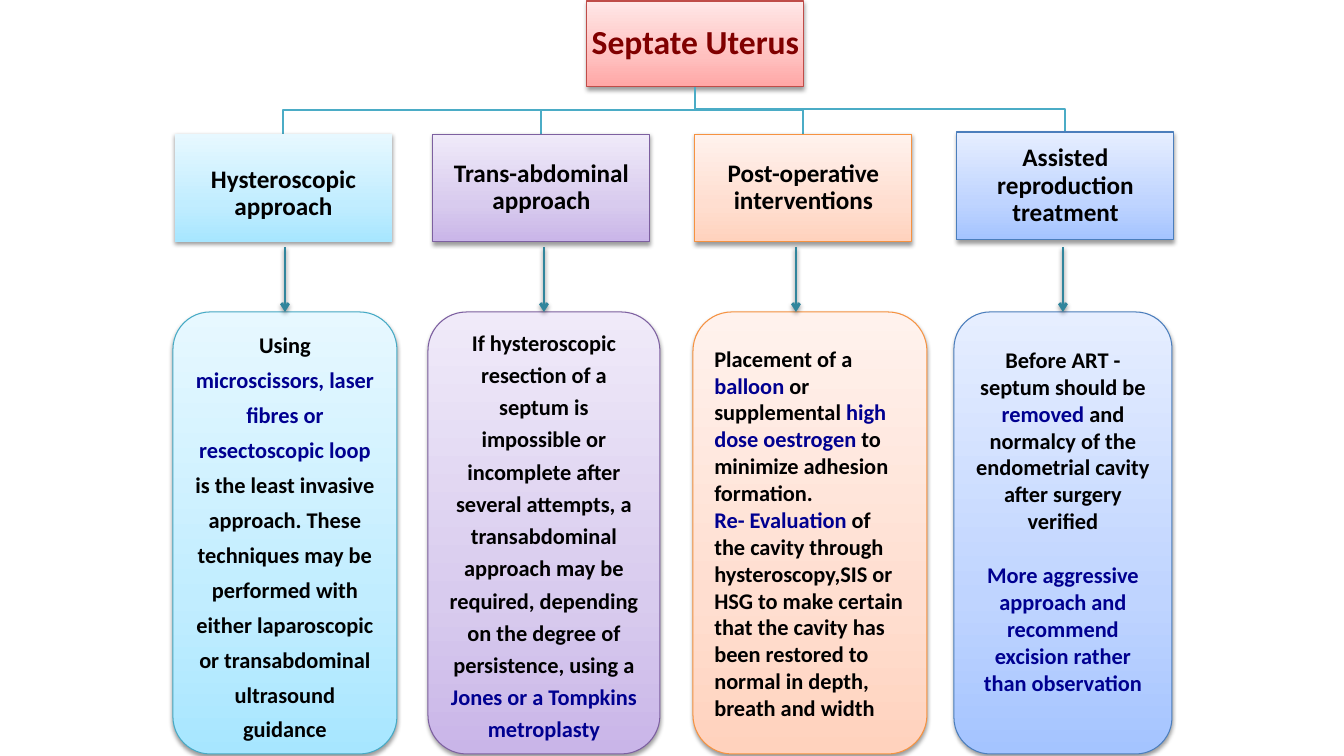
"""Build the Septate Uterus treatment tree slide."""
from copy import deepcopy

from lxml.etree import SubElement
from pptx import Presentation
from pptx.dml.color import RGBColor
from pptx.enum.shapes import MSO_CONNECTOR, MSO_SHAPE
from pptx.enum.text import MSO_ANCHOR, MSO_AUTO_SIZE, PP_ALIGN
from pptx.oxml.ns import qn
from pptx.util import Emu, Pt

PX = 12192000 / 1344
BLACK, NAVY = "000000", "000090"
rgb = RGBColor.from_string


def cast_shadow(item):
    """Give an item a soft shadow below it."""
    item.shadow.inherit = False
    effects = item._element.spPr.find(qn("a:effectLst"))
    shadow = SubElement(effects, qn("a:outerShdw"), blurRad="40000", dist="20000",
                        dir="5400000", rotWithShape="0")
    black = SubElement(shadow, qn("a:srgbClr"), val=BLACK)
    SubElement(black, qn("a:alpha"), val="38000")


def paint(box, tones, outline):
    """Fill a box with a three-tone upward gradient, outline it and shade it."""
    box.fill.gradient()
    box.fill.gradient_angle = 90
    stop_list = box._element.spPr.find(".//" + qn("a:gsLst"))
    stop_list.insert(1, deepcopy(stop_list[0]))
    for stop, tone, position in zip(box.fill.gradient_stops, tones, (0, 0.35, 1)):
        stop.color.rgb = rgb(tone)
        stop.position = position
    if outline:
        box.line.color.rgb = rgb(outline)
        box.line.width = Pt(0.75)
    else:
        box.line.fill.background()
    cast_shadow(box)


BLUE_TONES = ("A7E6FF", "C1EDFF", "E7F8FF")
PURPLE_TONES = ("C9B5E8", "D8CBEE", "F0EAF9")
ORANGE_TONES = ("FFD2BD", "FFDED0", "FFF2ED")
INDIGO_TONES = ("A4C4FF", "BFD4FF", "E6EEFF")

branches = [
    dict(heading="Hysteroscopic approach", tones=BLUE_TONES, node_line=None,
         detail_line="46AAC5", node=(175, 134), node_inset=13, detail=(173, 224),
         arrow=285, align=PP_ALIGN.CENTER, spacing=1.3, bottom_inset=5,
         paragraphs=[[("Using ", BLACK),
                      ("microscissors, laser fibres or resectoscopic loop ", NAVY),
                      ("is the least invasive approach. These techniques may be "
                       "performed with either laparoscopic or transabdominal "
                       "ultrasound guidance", BLACK)]]),
    dict(heading="Trans-abdominal approach", tones=PURPLE_TONES, node_line="7D60A0",
         detail_line="7D60A0", node=(433, 134), node_inset=1, detail=(428, 232),
         arrow=544, align=PP_ALIGN.CENTER, spacing=1.2, bottom_inset=5,
         paragraphs=[[("If hysteroscopic resection of a septum is impossible or "
                       "incomplete after several attempts, a transabdominal approach "
                       "may be required, depending on the degree of persistence, "
                       "using a ", BLACK),
                      ("Jones or a Tompkins metroplasty", NAVY)]]),
    dict(heading="Post-operative interventions", tones=ORANGE_TONES, node_line="F69240",
         detail_line="F69240", node=(695, 134), node_inset=1, detail=(693, 234),
         arrow=796, align=PP_ALIGN.LEFT, spacing=1.0, bottom_inset=5,
         paragraphs=[[("Placement of a ", BLACK), ("balloon ", NAVY),
                      ("or supplemental ", BLACK), ("high dose oestrogen", NAVY),
                      (" to minimize adhesion formation.", BLACK)],
                     [("Re- Evaluation ", NAVY),
                      ("of the cavity through hysteroscopy,SIS or HSG to make certain "
                       "that the cavity has been restored to normal in depth, breath "
                       "and width", BLACK)]]),
    dict(heading="Assisted reproduction treatment", tones=INDIGO_TONES,
         node_line="4B7EBC", detail_line="4B7EBC", node=(957, 132), node_inset=1,
         detail=(954, 218), arrow=1063, align=PP_ALIGN.CENTER, spacing=1.0,
         bottom_inset=29,
         paragraphs=[[("Before ART - septum should be ", BLACK), ("removed ", NAVY),
                      ("and normalcy of the endometrial cavity after surgery verified",
                       BLACK)],
                     [("More aggressive approach and recommend excision rather than "
                       "observation", NAVY)]]),
]

NODE_WIDTH, NODE_HEIGHT = 217, 108
ROOT_LEFT, ROOT_TOP, ROOT_HEIGHT = 587, 1, 86
STEM_X, STEM_TOP = ROOT_LEFT + NODE_WIDTH // 2, ROOT_TOP + ROOT_HEIGHT
DETAIL_TOP, DETAIL_HEIGHT = 312, 442
ARROW_TOP = 247

deck = Presentation()
deck.slide_width, deck.slide_height = Emu(12192000), Emu(6858000)
slide = deck.slides.add_slide(deck.slide_layouts[5])
shapes = slide.shapes

root = shapes.title
root.left, root.top, root.width, root.height = (
    Emu(round(n * PX)) for n in (ROOT_LEFT, ROOT_TOP, NODE_WIDTH, ROOT_HEIGHT))
paint(root, ("FFA6A5", "FFC0BF", "FFE7E7"), "BF4C48")
root_text = root.text_frame
root_text.text = "Septate Uterus"
root_text.auto_size = MSO_AUTO_SIZE.NONE
root_text.word_wrap = True
root_text.vertical_anchor = MSO_ANCHOR.MIDDLE
root_text.margin_left = root_text.margin_right = Emu(round(2 * PX))
root_text.margin_top = root_text.margin_bottom = Emu(round(2 * PX))
title_line = root_text.paragraphs[0]
title_line.alignment = PP_ALIGN.CENTER
title_line.line_spacing = 0.9
title_line.font.name, title_line.font.size = "Calibri", Pt(24)
title_line.font.bold = True
title_line.font.color.rgb = rgb("800000")

for branch in reversed(branches):
    node_left, node_top = branch["node"]
    node_x, bar_y = node_left + NODE_WIDTH // 2, (STEM_TOP + node_top) // 2
    outline = shapes.build_freeform(STEM_X, STEM_TOP, scale=PX)
    outline.add_line_segments([(STEM_X, bar_y), (node_x, bar_y), (node_x, node_top)],
                              close=False)
    limb = outline.convert_to_shape()
    limb.fill.background()
    limb.line.color.rgb = rgb("4BACC6")
    limb.line.width = Pt(2)
    limb.shadow.inherit = False

for branch in branches:
    node = shapes.add_shape(MSO_SHAPE.RECTANGLE, *(
        Emu(round(n * PX)) for n in (*branch["node"], NODE_WIDTH, NODE_HEIGHT)))
    paint(node, branch["tones"], branch["node_line"])
    node_text = node.text_frame
    node_text.text = branch["heading"]
    node_text.word_wrap = True
    node_text.vertical_anchor = MSO_ANCHOR.MIDDLE
    node_text.margin_left = node_text.margin_right = Emu(round(PX))
    node_text.margin_top = Emu(round(branch["node_inset"] * PX))
    node_text.margin_bottom = Emu(round(PX))
    heading = node_text.paragraphs[0]
    heading.alignment = PP_ALIGN.CENTER
    heading.line_spacing = 0.9
    heading.font.name, heading.font.size, heading.font.bold = "Calibri", Pt(18), True
    heading.font.color.rgb = rgb(BLACK)

    detail_left, detail_width = branch["detail"]
    detail = shapes.add_shape(MSO_SHAPE.ROUNDED_RECTANGLE, *(
        Emu(round(n * PX))
        for n in (detail_left, DETAIL_TOP, detail_width, DETAIL_HEIGHT)))
    paint(detail, branch["tones"], branch["detail_line"])
    detail_text = detail.text_frame
    detail_text.word_wrap = True
    detail_text.vertical_anchor = MSO_ANCHOR.MIDDLE
    detail_text.margin_bottom = Emu(round(branch["bottom_inset"] * PX))
    for index, pieces in enumerate(branch["paragraphs"]):
        paragraph = detail_text.add_paragraph() if index else detail_text.paragraphs[0]
        paragraph.alignment = branch["align"]
        paragraph.line_spacing = branch["spacing"]
        if index and branch["align"] == PP_ALIGN.CENTER:
            paragraph.space_before = Pt(19.5)
        paragraph.font.name, paragraph.font.size = "Calibri", Pt(16)
        paragraph.font.bold = True
        for words, colour in pieces:
            run = paragraph.add_run()
            run.text = words
            run.font.color.rgb = rgb(colour)

    arrow_x = Emu(round(branch["arrow"] * PX))
    arrow = shapes.add_connector(MSO_CONNECTOR.STRAIGHT, arrow_x,
                                 Emu(round(ARROW_TOP * PX)), arrow_x,
                                 Emu(round(DETAIL_TOP * PX)))
    if branch["arrow"] == detail_left + detail_width // 2:
        arrow.end_connect(detail, 0)
    arrow.line.color.rgb = rgb("31859C")
    arrow.line.width = Pt(2)
    SubElement(arrow.line._get_or_add_ln(), qn("a:tailEnd"), type="arrow")
    SubElement(arrow._element.spPr, qn("a:effectLst"))
    cast_shadow(arrow) if hasattr(arrow, "shadow") else None

deck.save("out.pptx")
